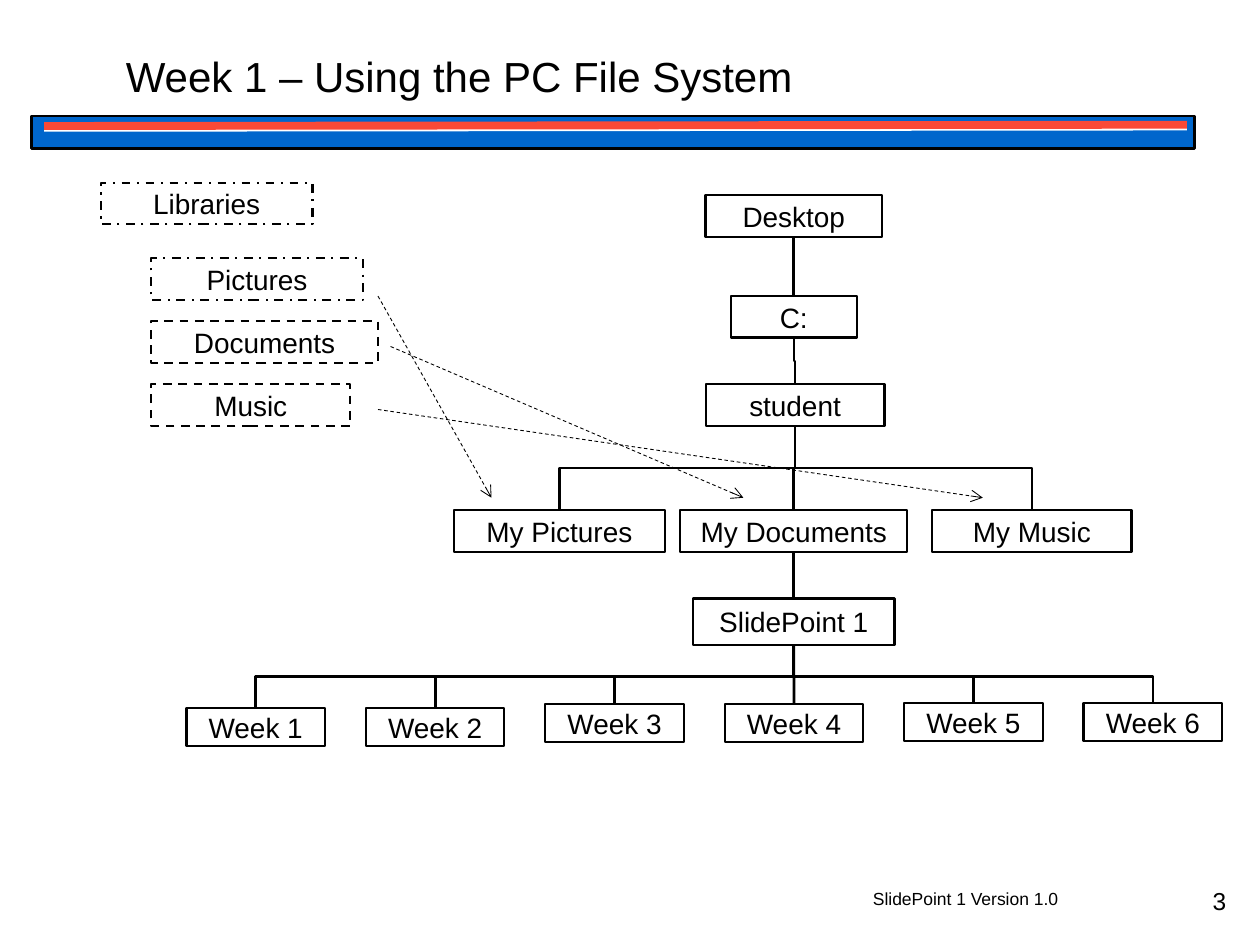
"""Build a slide showing the folder tree of a PC file system."""
import pptx
import pptx.dml.color
import pptx.enum.dml
import pptx.enum.shapes
import pptx.enum.text
import pptx.oxml
import pptx.oxml.ns
import pptx.util

RGBColor = pptx.dml.color.RGBColor
Dash = pptx.enum.dml.MSO_LINE
Align = pptx.enum.text.PP_ALIGN
Connector = pptx.enum.shapes.MSO_CONNECTOR

BLACK = RGBColor(0x00, 0x00, 0x00)
WHITE = RGBColor(0xFF, 0xFF, 0xFF)
BLUE = RGBColor(0x00, 0x66, 0xCC)
RED = RGBColor(0xFA, 0x49, 0x36)

COLUMNS, ROWS = 100, 75
TOP, BOTTOM = 0, 2


class TreeSlide:
    """Style and current slide; lengths are columns and rows of a 100 by 75 grid."""

    font = "Arial"

    def __init__(self, presentation):
        self.slide = presentation.slides.add_slide(presentation.slide_layouts[6])
        self.column = presentation.slide_width / COLUMNS
        self.row = presentation.slide_height / ROWS

    def place(self, x, y, width, height):
        return (round(x * self.column), round(y * self.row),
                round(width * self.column), round(height * self.row))

    def add_text(self, frame, text, size, align):
        paragraph = frame.paragraphs[0]
        paragraph.alignment = align
        run = paragraph.add_run()
        run.text = text
        run.font.name = self.font
        run.font.size = pptx.util.Pt(size)
        run.font.color.rgb = BLACK

    def stroke(self, line, width, color=BLACK, dash=None):
        line.color.rgb = color
        line.width = pptx.util.Pt(width)
        if dash:
            line.dash_style = dash

    def label(self, text, x, y, width, height, size, align=Align.LEFT, wrap=True):
        box = self.slide.shapes.add_textbox(*self.place(x, y, width, height))
        box.text_frame.word_wrap = wrap
        self.add_text(box.text_frame, text, size, align)

    def rectangle(self, x, y, width, height, line_width, dash=None, fill=None):
        shape = self.slide.shapes.add_shape(
            pptx.enum.shapes.MSO_SHAPE.RECTANGLE, *self.place(x, y, width, height))
        shape.shadow.inherit = False
        if fill:
            shape.fill.solid()
            shape.fill.fore_color.rgb = fill
        else:
            shape.fill.background()
        self.stroke(shape.line, line_width, dash=dash)
        return shape

    def folder(self, text, x, y, width, height=3.3, dash=None):
        shape = self.rectangle(x, y, width, height, 1.25, dash)
        shape.text_frame.word_wrap = True
        shape.text_frame.vertical_anchor = pptx.enum.text.MSO_ANCHOR.MIDDLE
        self.add_text(shape.text_frame, text, 16, Align.CENTER)
        return shape

    def line(self, x1, y1, x2, y2, width, color=BLACK, dash=None, kind=Connector.STRAIGHT):
        connector = self.slide.shapes.add_connector(kind, *self.place(x1, y1, x2, y2))
        self.stroke(connector.line, width, color, dash)
        connector._element.spPr.append(pptx.oxml.parse_xml(
            f"<a:effectLst {pptx.oxml.ns.nsdecls('a')}/>"))
        return connector

    def arrow(self, x1, y1, x2, y2):
        connector = self.line(x1, y1, x2, y2, 0.5, dash=Dash.DASH)
        outline = connector._element.spPr.find(pptx.oxml.ns.qn("a:ln"))
        outline.append(pptx.oxml.parse_xml(
            f"<a:tailEnd {pptx.oxml.ns.nsdecls('a')} type=\"arrow\"/>"))

    def link(self, parent, child, kind=Connector.STRAIGHT):
        connector = self.line(0, 0, 0, 0, 1.5, kind=kind)
        connector.begin_connect(parent, BOTTOM)
        connector.end_connect(child, TOP)
        return connector

    def branch(self, parent, child, bend):
        """Join two folders by an elbow that turns at the row called bend."""
        connector = self.link(parent, child, Connector.ELBOW)
        start_x = parent.left + parent.width // 2
        end_x = child.left + child.width // 2
        start_y = parent.top + parent.height
        drop, shift = child.top - start_y, abs(end_x - start_x)
        connector.left = (start_x + end_x - drop) // 2
        connector.top = (start_y + child.top - shift) // 2
        connector.width, connector.height = drop, shift
        rightward = end_x > start_x
        properties = connector._element.spPr
        frame = properties.find(pptx.oxml.ns.qn("a:xfrm"))
        frame.set("rot", "16200000" if rightward else "5400000")
        frame.set("flipH", "1" if rightward else "0")
        frame.set("flipV", "0")
        share = round((bend * self.row - start_y) / drop * 100000)
        guides = properties.find(pptx.oxml.ns.qn("a:prstGeom")).get_or_add_avLst()
        guides.append(pptx.oxml.parse_xml(
            f"<a:gd {pptx.oxml.ns.nsdecls('a')} name=\"adj1\" fmla=\"val {share}\"/>"))


def main():
    presentation = pptx.Presentation()
    presentation.slide_width = pptx.util.Inches(10)
    presentation.slide_height = pptx.util.Inches(7.5)
    tree = TreeSlide(presentation)

    tree.rectangle(2.5, 9.2, 92.3, 2.6, 1.5, fill=BLUE)
    tree.line(3.5, 10.3, 94.2, 10.2, 2.25, WHITE)
    tree.line(3.5, 10, 94.2, 9.9, 4.5, RED)
    tree.label("Week 1 – Using the PC File System", 9, 3.5, 55.5, 5, 24, wrap=False)
    tree.label("SlidePoint 1 Version 1.0", 68.3, 70, 26.7, 2.7, 10)
    tree.label("3", 75, 69.8, 23.3, 5.2, 14, Align.RIGHT)

    for name, x, y, width, dash in (
            ("Libraries", 8, 14.5, 16.8, Dash.DASH_DOT),
            ("Pictures", 12, 20.5, 16.8, Dash.DASH_DOT),
            ("Documents", 12, 25.5, 18, Dash.DASH),
            ("Music", 12, 30.5, 15.8, Dash.DASH)):
        tree.folder(name, x, y, width, dash=dash)

    desktop = tree.folder("Desktop", 56, 15.5, 14)
    drive = tree.folder("C:", 58, 23.5, 10)
    student = tree.folder("student", 56, 30.5, 14.2)
    pictures = tree.folder("My Pictures", 36, 40.5, 16.8)
    documents = tree.folder("My Documents", 54, 40.5, 18)
    music = tree.folder("My Music", 74, 40.5, 15.8)
    course = tree.folder("SlidePoint 1", 55, 47.5, 16, 3.7)

    tree.link(desktop, drive)
    tree.branch(drive, student, 28.65)
    for library in (documents, music, pictures):
        tree.branch(student, library, 37.15)
    tree.branch(documents, course, 45.65)

    week_rows = (56.2, 56.2, 55.9, 55.9, 55.8, 55.8)
    for index, row in enumerate(week_rows):
        week = tree.folder(f"Week {index + 1}", 14.8 + 14.24 * index, row, 11, 3)
        if index == 3:
            tree.link(course, week)
        else:
            tree.branch(course, week, 53.7)

    for x1, y1, x2 in ((30, 23.5, 39), (31, 27.5, 59), (30, 32.5, 78)):
        tree.arrow(x1, y1, x2, 39.5)

    presentation.save("out.pptx")


if __name__ == "__main__":
    main()
